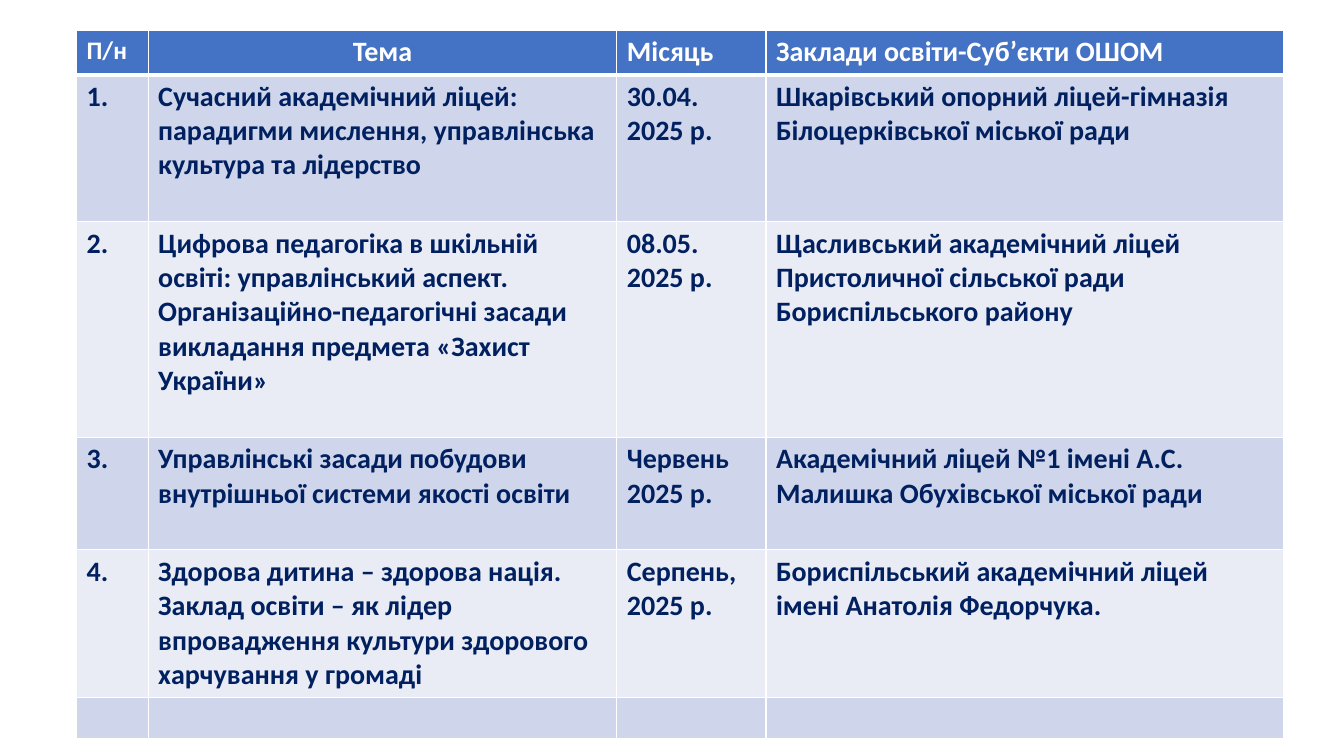
from lxml.etree import SubElement
from pptx import Presentation
from pptx.dml.color import RGBColor
from pptx.enum.text import PP_ALIGN as Align
from pptx.oxml.ns import qn
from pptx.util import Pt

WHITE, NAVY, BLUE = "FFFFFF", "002060", "4472C4"
BANDS = ["CFD5EA", "E9EBF5"]
COL_WIDTHS = [51.1, 334.8, 106.6, 369.4]
ROW_HEIGHTS = [31.5, 105, 154, 80.5, 105, 29.5]

HEADER = ["П/н", "Тема", "Місяць", "Заклади освіти-Суб’єкти ОШОМ"]
EVENTS = [
    ["1.",
     "Сучасний академічний ліцей: парадигми мислення, управлінська культура та лідерство",
     "30.04.\n2025 р.",
     "Шкарівський опорний ліцей-гімназія Білоцерківської міської ради"],
    ["2.",
     "Цифрова педагогіка в шкільній освіті: управлінський аспект.\n"
     "Організаційно-педагогічні засади викладання предмета «Захист України»",
     "08.05.\n2025 р.",
     "Щасливський академічний ліцей\nПристоличної сільської ради Бориспільського району"],
    ["3.",
     "Управлінські засади побудови внутрішньої системи якості освіти",
     "Червень\n2025 р.",
     "Академічний ліцей №1 імені А.С. Малишка Обухівської міської ради"],
    ["4.",
     "Здорова дитина – здорова нація. Заклад освіти – як лідер впровадження "
     "культури здорового харчування у громаді",
     "Серпень,\n2025 р.",
     "Бориспільський академічний ліцей імені Анатолія Федорчука."],
    ["", "", "", ""],
]


def rgb(value):
    return RGBColor.from_string(value)


def write(tf, text, size=20, color=NAVY, bold=True, align=Align.LEFT):
    for i, line in enumerate(text.split("\n")):
        p = tf.paragraphs[0] if i == 0 else tf.add_paragraph()
        p.alignment = align
        if line:
            r = p.add_run()
            r.text = line
            r.font.name = "Calibri"
            r.font.size = Pt(size)
            r.font.bold = bold
            r.font.color.rgb = rgb(color)


def set_borders(cell, top=1, bottom=1):
    tc_pr = cell._tc.get_or_add_tcPr()
    for side, width in (("L", 1), ("R", 1), ("T", top), ("B", bottom)):
        ln = SubElement(tc_pr, qn(f"a:ln{side}"), w=str(Pt(width)))
        fill = SubElement(ln, qn("a:solidFill"))
        SubElement(fill, qn("a:srgbClr"), val=WHITE)


def fill_cell(cell, text, fill, top=1, bottom=1, **fmt):
    set_borders(cell, top, bottom)
    cell.fill.solid()
    cell.fill.fore_color.rgb = rgb(fill)
    write(cell.text_frame, text, **fmt)


def add_schedule(slide):
    frame = slide.shapes.add_table(len(ROW_HEIGHTS), len(COL_WIDTHS), Pt(54.7), Pt(21.6),
                                   Pt(sum(COL_WIDTHS)), Pt(sum(ROW_HEIGHTS)))
    table = frame.table
    for col, width in zip(table.columns, COL_WIDTHS):
        col.width = Pt(width)
    for row, height in zip(table.rows, ROW_HEIGHTS):
        row.height = Pt(height)
    for c, text in enumerate(HEADER):
        fill_cell(table.cell(0, c), text, BLUE, bottom=3, color=WHITE,
                  size=18 if c == 0 else 20,
                  align=Align.CENTER if c == 1 else Align.LEFT)
    for n, event in enumerate(EVENTS):
        for c, text in enumerate(event):
            fill_cell(table.cell(n + 1, c), text, BANDS[n % 2], top=3 if n == 0 else 1)


def main():
    prs = Presentation()
    prs.slide_width, prs.slide_height = Pt(960), Pt(540)
    slide = prs.slides.add_slide(prs.slide_layouts[6])
    add_schedule(slide)
    prs.save("out.pptx")


if __name__ == "__main__":
    main()
